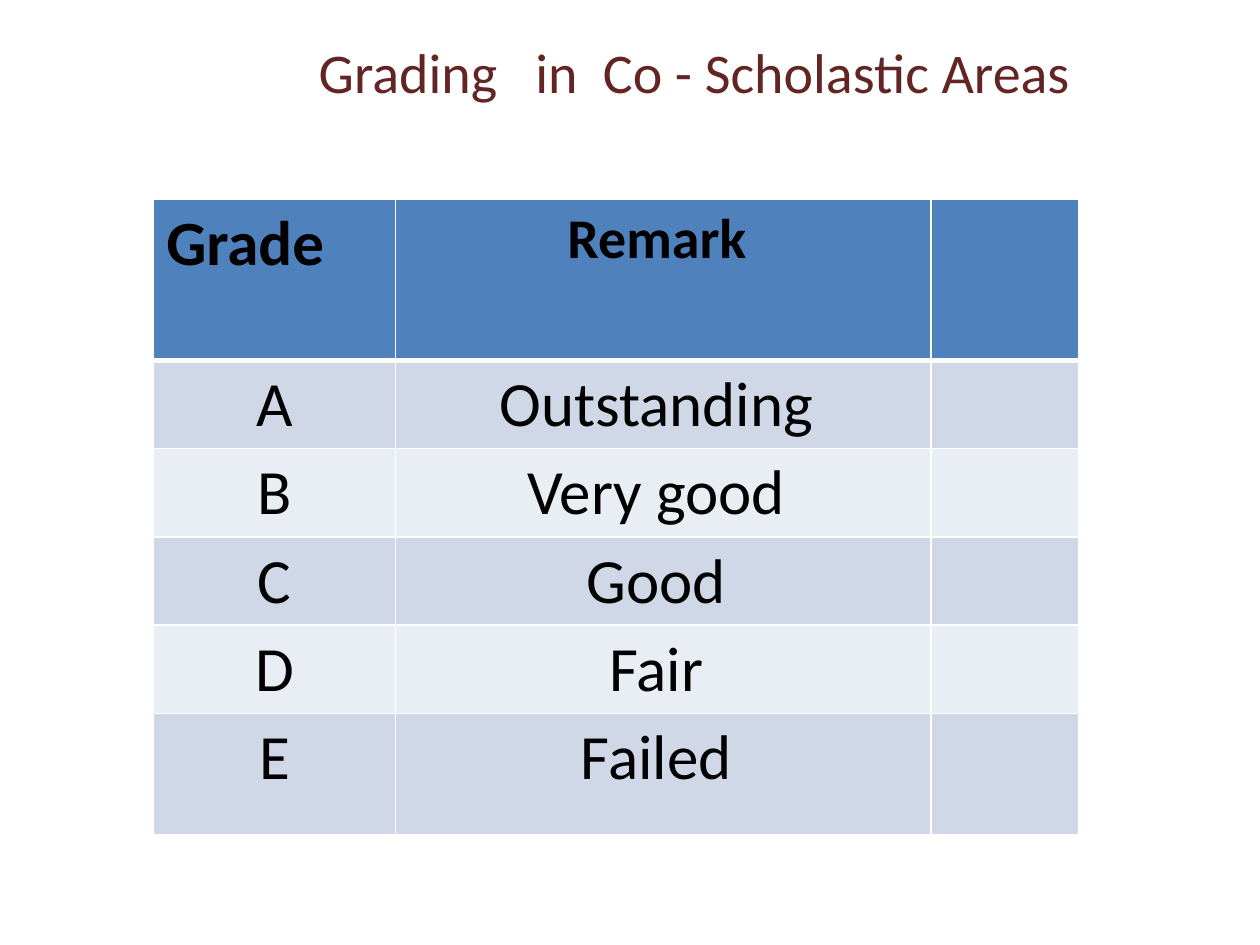
from dataclasses import dataclass

from lxml import etree
from pptx import Presentation
from pptx.dml.color import RGBColor
from pptx.enum import text
from pptx.oxml import ns
from pptx.util import Inches, Pt


@dataclass(frozen=True)
class Theme:
    font: str = "Calibri"
    title: str = "632523"
    ink: str = "000000"
    header: str = "4F81BD"
    bands: tuple = ("D0D8E8", "E9EDF4")
    border: str = "FFFFFF"
    small: int = 32
    large: int = 36
    thin: int = 1
    thick: int = 3


@dataclass(frozen=True)
class GradeRow:
    grade: str
    remark: str
    height: float = 0.68


THEME = Theme()
HEADER = GradeRow("Grade", "Remark ", 1.28)
GRADES = [
    GradeRow("A", "Outstanding "),
    GradeRow("B", "Very good "),
    GradeRow("C", "Good "),
    GradeRow("D", "Fair "),
    GradeRow("E", "Failed ", 0.96),
]
COLUMN_WIDTHS = (1.92, 4.25, 1.17)
# Title pieces, each with its letter spacing in points
TITLE_RUNS = [("Grading", 0), (" ", 14.4), ("in", 0), (" ", 7.2),
              ("Co - Scholastic Areas", 0)]


def add_run(p, wording: str, size: int, color: str, bold: bool = False):
    r = p.add_run()
    r.text = wording
    r.font.name = THEME.font
    r.font.size = Pt(size)
    r.font.bold = bold
    r.font.color.rgb = RGBColor.from_string(color)
    return r


def add_title(s) -> None:
    box = s.shapes.add_textbox(Inches(1.67), Inches(0.25), Inches(6.92), Inches(0.64))
    tf = box.text_frame
    tf.word_wrap = True
    tf.auto_size = text.MSO_AUTO_SIZE.SHAPE_TO_FIT_TEXT
    p = tf.paragraphs[0]
    p.alignment = text.PP_ALIGN.RIGHT
    for wording, spacing in TITLE_RUNS:
        r = add_run(p, wording, THEME.small, THEME.title)
        if spacing:
            r.font._element.set("spc", str(round(spacing * 100)))


def set_borders(cell, top: int, bottom: int) -> None:
    """Draw the four cell edges, with widths in points."""
    tc_pr = cell._tc.get_or_add_tcPr()
    widths = {"L": THEME.thin, "R": THEME.thin, "T": top, "B": bottom}
    for side, width in widths.items():
        ln = etree.SubElement(tc_pr, ns.qn(f"a:ln{side}"), w=str(Pt(width)))
        fill = etree.SubElement(ln, ns.qn("a:solidFill"))
        etree.SubElement(fill, ns.qn("a:srgbClr"), val=THEME.border)


def style_cell(cell, row: int) -> None:
    set_borders(cell,
                top=THEME.thick if row == 1 else THEME.thin,
                bottom=THEME.thick if row == 0 else THEME.thin)
    color = THEME.bands[(row - 1) % 2] if row else THEME.header
    cell.fill.solid()
    cell.fill.fore_color.rgb = RGBColor.from_string(color)


def add_grade_table(s) -> None:
    rows = [HEADER, *GRADES]
    table = s.shapes.add_table(
        len(rows), len(COLUMN_WIDTHS), Inches(1.22), Inches(1.58),
        Inches(sum(COLUMN_WIDTHS)), Inches(sum(row.height for row in rows))).table
    for column, width in zip(table.columns, COLUMN_WIDTHS):
        column.width = Inches(width)
    for i, row in enumerate(rows):
        table.rows[i].height = Inches(row.height)
        for cell in table.rows[i].cells:
            style_cell(cell, i)
        is_header = i == 0
        for j, wording in enumerate((row.grade, row.remark)):
            p = table.cell(i, j).text_frame.paragraphs[0]
            left = is_header and j == 0
            p.alignment = text.PP_ALIGN.LEFT if left else text.PP_ALIGN.CENTER
            size = THEME.small if is_header and j == 1 else THEME.large
            add_run(p, wording, size, THEME.ink, bold=is_header)


def main() -> None:
    prs = Presentation()
    prs.slide_width, prs.slide_height = Inches(10), Inches(7.5)
    s = prs.slides.add_slide(prs.slide_layouts[6])
    add_title(s)
    add_grade_table(s)
    prs.save("out.pptx")


if __name__ == "__main__":
    main()
